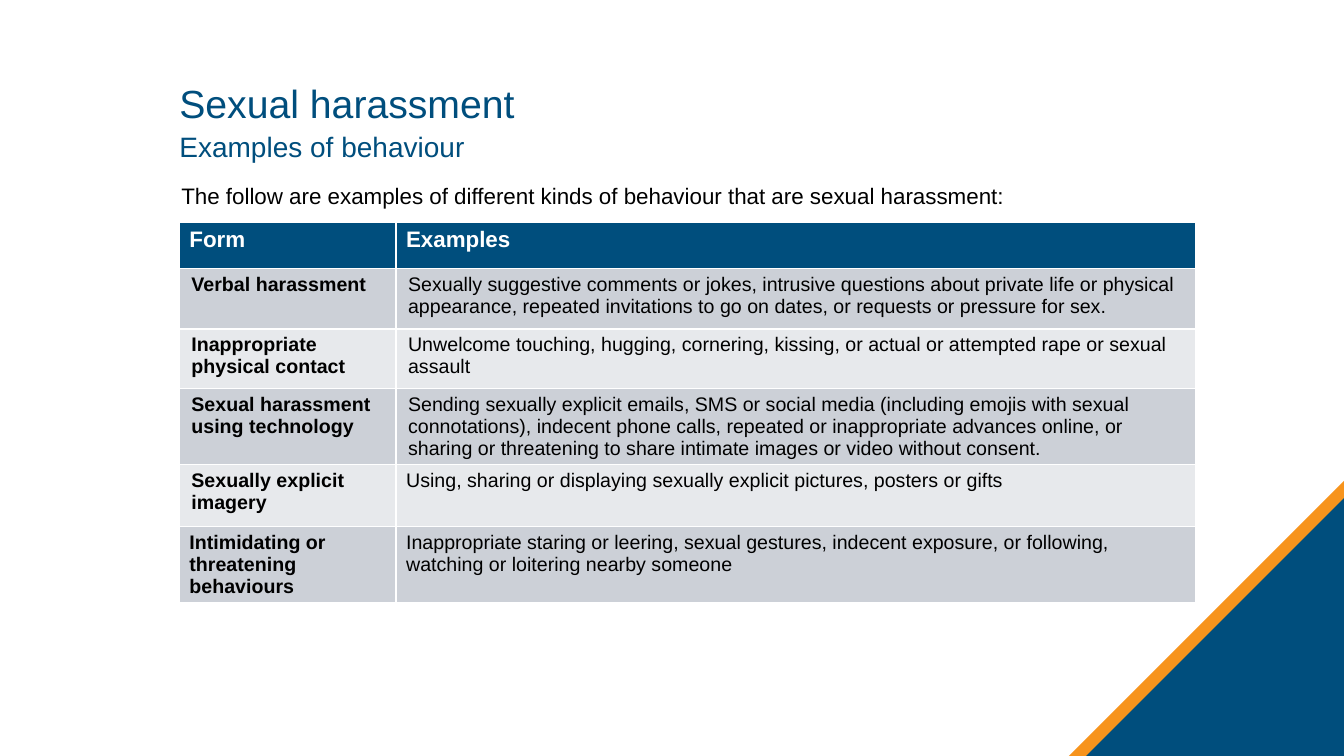
"""Build a slide with a table of sexual harassment examples."""
from pptx import Presentation
from pptx.dml.color import RGBColor
from pptx.enum import shapes, text
from pptx.util import Cm, Pt

NAVY = RGBColor(0x00, 0x4E, 0x7D)
ORANGE = RGBColor(0xF7, 0x94, 0x1D)
BLACK = RGBColor(0x00, 0x00, 0x00)
WHITE = RGBColor(0xFF, 0xFF, 0xFF)
BAND_DARK = RGBColor(0xCC, 0xD0, 0xD7)
BAND_LIGHT = RGBColor(0xE7, 0xE9, 0xEC)

SLIDE_W, SLIDE_H = Cm(33.87), Cm(19.05)
LEFT, TEXT_W = Cm(4.52), Cm(24.79)
INDENT = Cm(0.05)


def format_paragraph(p, size, color, bold=False, indent=0):
    if indent:
        p._p.get_or_add_pPr().set("marL", str(indent))
    for r in p.runs:
        r.font.name = "Arial"
        r.font.size = Pt(size)
        r.font.bold = bold
        r.font.color.rgb = color


def fill_text(sp, words, top, height, size, color, spacing, indent=0):
    sp.left, sp.top, sp.width, sp.height = LEFT, top, TEXT_W, height
    tf = sp.text_frame
    tf.text = words
    tf.word_wrap = True
    tf.auto_size = text.MSO_AUTO_SIZE.NONE
    tf.vertical_anchor = text.MSO_ANCHOR.TOP
    tf.margin_left = tf.margin_top = tf.margin_right = tf.margin_bottom = 0
    p = tf.paragraphs[0]
    p.alignment = text.PP_ALIGN.LEFT
    p.line_spacing = Pt(spacing)
    format_paragraph(p, size, color, indent=indent)


prs = Presentation()
prs.slide_width, prs.slide_height = SLIDE_W, SLIDE_H
s = prs.slides.add_slide(prs.slide_layouts[5])

for side, color in [(Cm(6.93), ORANGE), (Cm(6.5), NAVY)]:
    sp = s.shapes.add_shape(shapes.MSO_SHAPE.RIGHT_TRIANGLE,
                            SLIDE_W - side, SLIDE_H - side, side, side)
    sp.rotation = 270
    sp.shadow.inherit = False
    sp.fill.solid()
    sp.fill.fore_color.rgb = color
    sp.line.fill.background()

fill_text(s.shapes.title, "Sexual harassment", Cm(2.03), Cm(1.27), 28, NAVY, 33)
lines = [
    ("Examples of behaviour", Cm(3.43), Cm(1.1), 20, NAVY, 0),
    ("The follow are examples of different kinds of behaviour that are sexual harassment:",
     Cm(4.6), Cm(0.9), 16, BLACK, INDENT),
]
for words, top, height, size, color, indent in lines:
    sp = s.shapes.add_textbox(LEFT, top, TEXT_W, height)
    fill_text(sp, words, top, height, size, color, 19, indent)

rows = [
    (1.17, "Form", 0, "Examples", 0),
    (1.52, "Verbal harassment", INDENT,
     "Sexually suggestive comments or jokes, intrusive questions about private life or "
     "physical appearance, repeated invitations to go on dates, or requests or pressure "
     "for sex.", INDENT),
    (1.5, "Inappropriate physical contact", INDENT,
     "Unwelcome touching, hugging, cornering, kissing, or actual or attempted rape or "
     "sexual assault", INDENT),
    (1.45, "Sexual harassment using technology", INDENT,
     "Sending sexually explicit emails, SMS or social media (including emojis with sexual "
     "connotations), indecent phone calls, repeated or inappropriate advances online, or "
     "sharing or threatening to share intimate images or video without consent.", INDENT),
    (1.55, "Sexually explicit imagery", INDENT,
     "Using, sharing or displaying sexually explicit pictures, posters or gifts", 0),
    (1.83, "Intimidating or threatening behaviours", 0,
     "Inappropriate staring or leering, sexual gestures, indecent exposure, or following, "
     "watching or loitering nearby someone", 0),
]
table = s.shapes.add_table(len(rows), 2, LEFT, Cm(5.6), Cm(25.6), Cm(9.02)).table
table.columns[0].width = Cm(5.46)
table.columns[1].width = Cm(20.14)

for i, (height, form, form_indent, examples, examples_indent) in enumerate(rows):
    table.rows[i].height = Cm(height)
    header = i == 0
    fill = NAVY if header else BAND_DARK if i % 2 else BAND_LIGHT
    for j, (words, indent) in enumerate([(form, form_indent), (examples, examples_indent)]):
        cell = table.cell(i, j)
        cell.fill.solid()
        cell.fill.fore_color.rgb = fill
        cell.text_frame.text = words
        format_paragraph(cell.text_frame.paragraphs[0], 16 if header else 14,
                         WHITE if header else BLACK, header or j == 0, indent)

prs.save("out.pptx")
